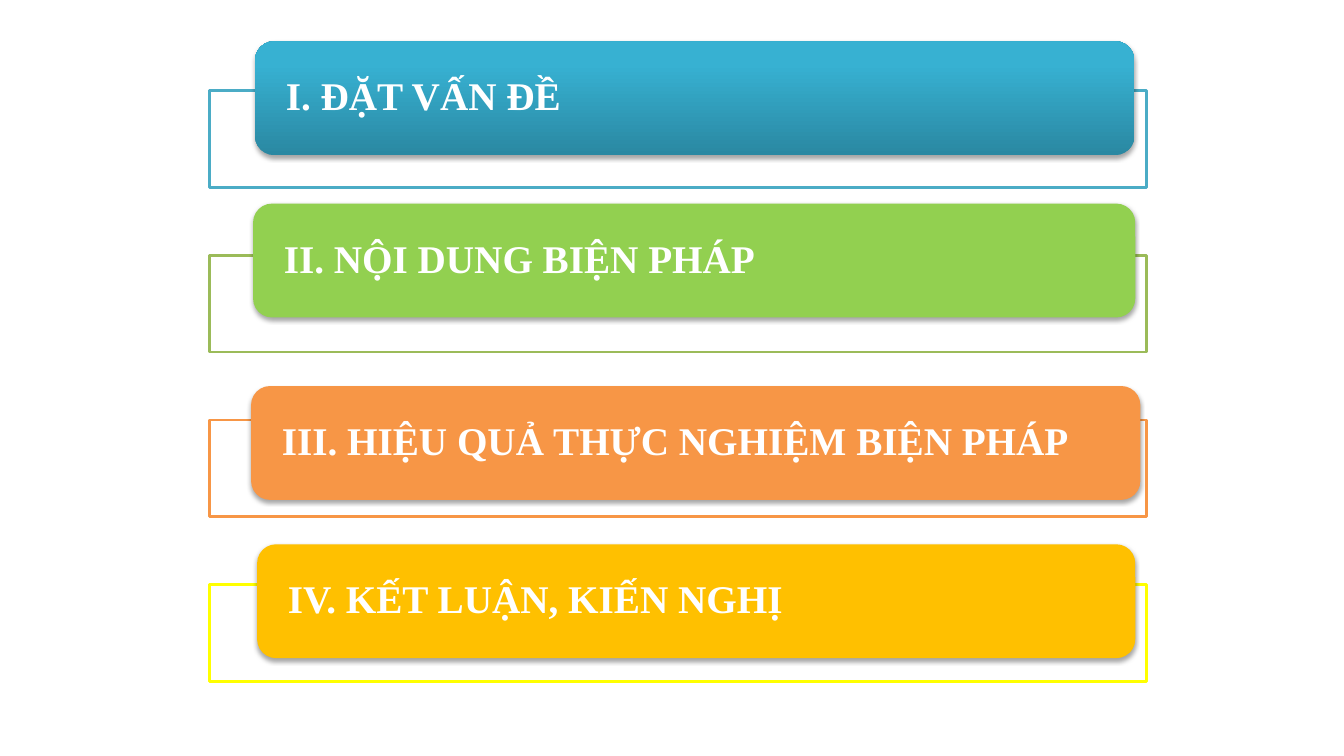
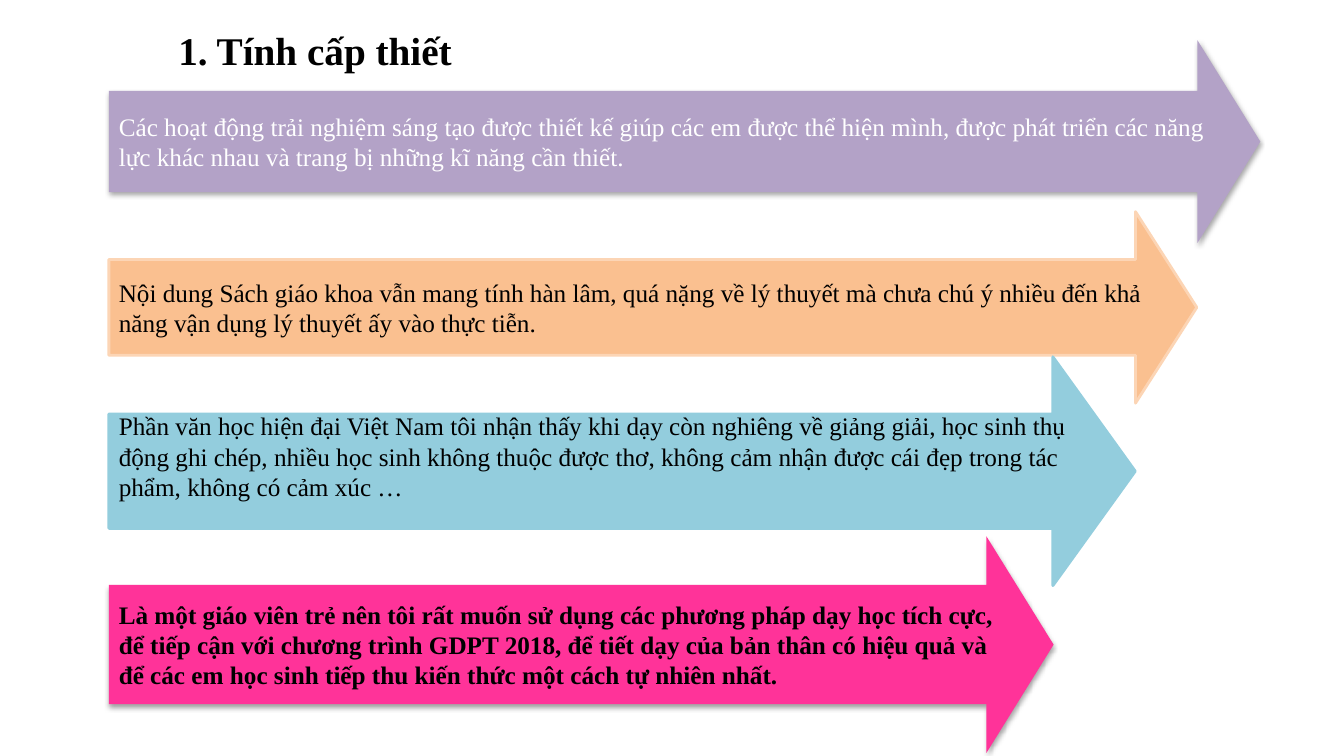
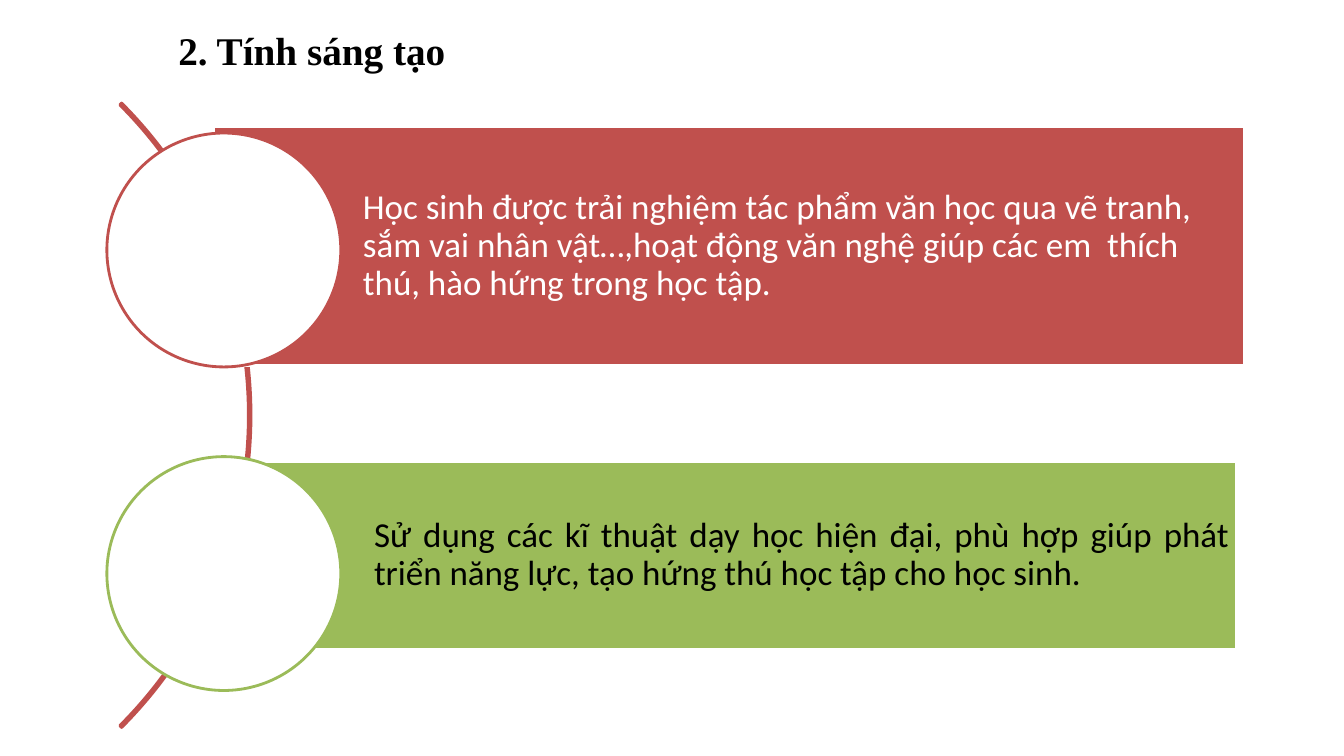
"""Build three slides: an agenda, the urgency arrows and the creativity list."""
import lxml.etree
import pptx
import pptx.dml.color
import pptx.enum.shapes
import pptx.enum.text
import pptx.oxml.ns
import pptx.util

Inches = pptx.util.Inches
SHAPES = pptx.enum.shapes.MSO_SHAPE
ALIGN = pptx.enum.text.PP_ALIGN
ANCHOR = pptx.enum.text.MSO_ANCHOR

COLORS = {
    "white": "FFFFFF", "black": "000000", "teal": "4BACC6", "teal_dark": "2A88A2",
    "teal_bright": "37B1D2", "green": "9BBB59", "lime": "92D050", "orange": "F79646",
    "yellow": "FFFF00", "amber": "FFC000", "purple": "B3A2C7", "peach": "FAC090",
    "peach_light": "FCD5B5", "sky": "93CDDD", "pink": "FF3399", "red": "C0504D",
}
SERIF = "Times New Roman"
HEADING_FONT = {"name": SERIF, "size": pptx.util.Pt(28), "bold": True}
ARROW_FONT = {"name": SERIF, "size": pptx.util.Pt(18), "bold": False}
BAND_FONT = {"name": "Calibri", "size": pptx.util.Pt(25), "bold": False}

AGENDA = [
    ("I. ĐẶT VẤN ĐỀ", "teal", "teal_bright", 2.53, 0.41, 8.72),
    ("II. NỘI DUNG BIỆN PHÁP", "green", "lime", 2.51, 2.02, 8.75),
    ("III. HIỆU QUẢ THỰC NGHIỆM BIỆN PHÁP", "orange", "orange", 2.49, 3.83, 8.82),
    ("IV. KẾT LUẬN, KIẾN NGHỊ", "yellow", "amber", 2.55, 5.4, 8.71),
]
ARROWS = [
    {"text": "Các hoạt động trải nghiệm sáng tạo được thiết kế giúp các em được thể hiện mình, "
             "được phát triển các năng lực khác nhau và trang bị những kĩ năng cần thiết.",
     "box": (1.08, 0.4, 11.42, 2.01), "adjustments": (0.5, 0.31),
     "fill": "purple", "text_color": "white"},
    {"text": "Nội dung Sách giáo khoa vẫn mang tính hàn lâm, quá nặng về lý thuyết mà chưa chú ý "
             "nhiều đến khả năng vận dụng lý thuyết ấy vào thực tiễn.",
     "box": (1.08, 2.1, 10.79, 1.9), "adjustments": (0.5, 0.32),
     "fill": "peach", "line": "peach_light"},
    {"text": "Phần văn học hiện đại Việt Nam tôi nhận thấy khi dạy còn nghiêng về giảng giải, "
             "học sinh thụ động ghi chép, nhiều học sinh không thuộc được thơ, không cảm nhận "
             "được cái đẹp trong tác phẩm, không có cảm xúc …",
     "box": (1.08, 3.54, 10.18, 2.27), "adjustments": (0.5, 0.36),
     "fill": "sky", "line": "sky", "bottom": 0.35},
    {"text": "Là một giáo viên trẻ nên tôi rất muốn sử dụng các phương pháp dạy học tích cực, "
             "để tiếp cận với chương trình GDPT 2018, để tiết dạy của bản thân có hiệu quả và "
             "để các em học sinh tiếp thu kiến thức một cách tự nhiên nhất.",
     "box": (1.08, 5.32, 9.37, 2.15), "adjustments": (0.55, 0.31),
     "fill": "pink", "bold": True},
]
BANDS = [
    ("Học sinh được trải nghiệm tác phẩm văn học qua vẽ tranh, sắm vai nhân vật…,hoạt động "
     "văn nghệ giúp các em  thích thú, hào hứng trong học tập.",
     (2.12, 1.26, 10.22, 2.37), 1.32, "red", "white", ALIGN.LEFT),
    ("Sử dụng các kĩ thuật dạy học hiện đại, phù hợp giúp phát triển năng lực, tạo hứng thú "
     "học tập cho học sinh.",
     (2.23, 4.58, 10.03, 1.86), 4.53, "green", "black", ALIGN.JUSTIFY),
]


def rgb(name):
    return pptx.dml.color.RGBColor.from_string(COLORS[name])


def set_values(target, values):
    for name, value in values.items():
        setattr(target, name, value)


def add_shadow(shape):
    effects = shape._element.spPr.find(pptx.oxml.ns.qn("a:effectLst"))
    shadow = lxml.etree.SubElement(
        effects, pptx.oxml.ns.qn("a:outerShdw"), blurRad="40000", dist="23000",
        dir="5400000", rotWithShape="0")
    color = lxml.etree.SubElement(shadow, pptx.oxml.ns.qn("a:srgbClr"), val=COLORS["black"])
    lxml.etree.SubElement(color, pptx.oxml.ns.qn("a:alpha"), val="35000")


def add_shape(slide, kind, box, fill, line=None, shadow=False, adjustments=()):
    shape = slide.shapes.add_shape(kind, *map(Inches, box))
    for index, value in enumerate(adjustments):
        shape.adjustments[index] = value
    shape.fill.solid()
    shape.fill.fore_color.rgb = rgb(fill)
    if line:
        shape.line.color.rgb = rgb(line)
        shape.line.width = pptx.util.Pt(2)
    else:
        shape.line.fill.background()
    shape.shadow.inherit = False
    if shadow:
        add_shadow(shape)
    return shape


def write_text(shape, text, font, color, insets=(0.1, 0.05, 0.1, 0.05),
               anchor=ANCHOR.MIDDLE, alignment=ALIGN.LEFT, spacing=1.0):
    sides = ("margin_left", "margin_top", "margin_right", "margin_bottom")
    frame = shape.text_frame
    set_values(frame, {"word_wrap": True, "vertical_anchor": anchor,
                       **dict(zip(sides, map(Inches, insets)))})
    paragraph = frame.paragraphs[0]
    set_values(paragraph, {"alignment": alignment, "line_spacing": spacing})
    run = paragraph.add_run()
    run.text = text
    set_values(run.font, font)
    run.font.color.rgb = rgb(color)


def add_title(slide, text):
    box = slide.shapes.add_textbox(*map(Inches, (1.67, 0.21, 10, 0.6)))
    write_text(box, text, HEADING_FONT, "black", anchor=ANCHOR.TOP)


def shade_bar(bar):
    bar.fill.gradient()
    bar.fill.gradient_angle = 90
    stops = zip(bar.fill.gradient_stops, (0, 0.8), ("teal_dark", "teal_bright"))
    for stop, position, color in stops:
        stop.position = position
        stop.color.rgb = rgb(color)


def build_agenda(slide):
    pitch = 4.9 / 3
    for index, (_, frame_color, *_) in enumerate(AGENDA):
        add_shape(slide, SHAPES.RECTANGLE, (2.08, 0.9 + index * pitch, 9.29, 0.96),
                  "white", frame_color)
    for text, _, bar_color, left, top, width in AGENDA:
        bar = add_shape(slide, SHAPES.ROUNDED_RECTANGLE, (left, top, width, 1.13),
                        bar_color, shadow=True)
        if bar_color == "teal_bright":
            shade_bar(bar)
        write_text(bar, text, HEADING_FONT, "white", (0.25, 0, 0.25, 0), spacing=0.9)


def build_urgency(slide):
    add_title(slide, "1. Tính cấp thiết")
    for arrow in ARROWS:
        line = arrow.get("line")
        shape = add_shape(slide, SHAPES.RIGHT_ARROW, arrow["box"], arrow["fill"], line,
                          shadow=line is None, adjustments=arrow["adjustments"])
        font = {**ARROW_FONT, "bold": arrow.get("bold", False)}
        write_text(shape, arrow["text"], font, arrow.get("text_color", "black"),
                   (0.1, 0.05, 0.1, arrow.get("bottom", 0.05)))


def build_creativity(slide):
    add_shape(slide, SHAPES.BLOCK_ARC, (-6.27, -0.26, 8.76, 8.76), "red", "red",
              adjustments=(189, 27, 0.003))
    for text, box, circle_top, color, text_color, alignment in BANDS:
        band = add_shape(slide, SHAPES.RECTANGLE, box, color, "white")
        write_text(band, text, BAND_FONT, text_color, (1.48, 0.07, 0.07, 0.07),
                   alignment=alignment, spacing=0.9)
        add_shape(slide, SHAPES.OVAL, (1.06, circle_top, 2.32, 2.32), "white", color)
    add_title(slide, "2. Tính sáng tạo")


def main():
    presentation = pptx.Presentation()
    set_values(presentation, {"slide_width": Inches(13.33), "slide_height": Inches(7.5)})
    for build in (build_agenda, build_urgency, build_creativity):
        build(presentation.slides.add_slide(presentation.slide_layouts[6]))
    presentation.save("out.pptx")


if __name__ == "__main__":
    main()
